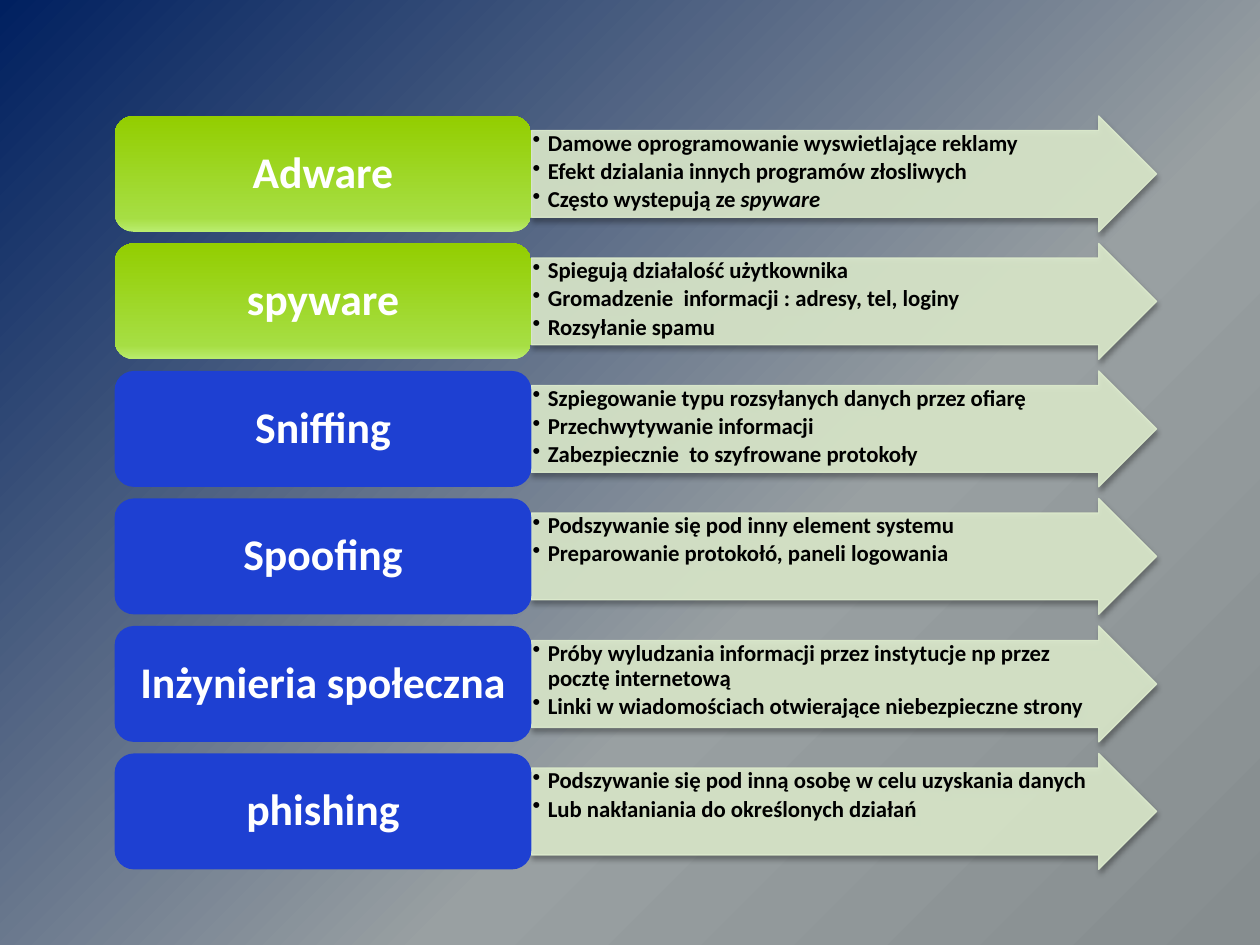
from lxml.etree import SubElement
from pptx import Presentation
from pptx.dml.color import RGBColor
from pptx.enum.shapes import MSO_SHAPE as Shape
from pptx.enum.text import MSO_ANCHOR as Anchor, PP_ALIGN as Align
from pptx.oxml.ns import qn
from pptx.util import Inches, Pt

COLORS = {"arrow": "DDEBCD", "blue": "1E40D2", "label": "FFFFFF", "body": "000000"}
BACKDROP = [(0, "002060"), (62, "99A0A2"), (100, "868D8F")]
GREEN = [(0, "BAED6F"), (12, "A6DE43"), (100, "93CE00")]

# Diagram area in inches, and the rules of its grid
AREA = (0.91, 0.92, 8.27, 5.98)
LABEL_SHARE = 0.4
GAP_SHARE = 0.1  # gap between rows, as a share of the row height

# Label, is it green, bullets (a tuple holds plain text and an italic ending)
THREATS = [
    ("Adware", True, ["Damowe oprogramowanie wyswietlające reklamy",
                      "Efekt dzialania innych programów złosliwych",
                      ("Często wystepują ze ", "spyware")]),
    ("spyware", True, ["Spiegują działalość użytkownika",
                       "Gromadzenie  informacji : adresy, tel, loginy",
                       "Rozsyłanie spamu"]),
    ("Sniffing", False, ["Szpiegowanie typu rozsyłanych danych przez ofiarę",
                         "Przechwytywanie informacji",
                         "Zabezpiecznie  to szyfrowane protokoły"]),
    ("Spoofing", False, ["Podszywanie się pod inny element systemu",
                         "Preparowanie protokołó, paneli logowania"]),
    ("Inżynieria społeczna", False,
     ["Próby wyludzania informacji przez instytucje np przez pocztę internetową",
      "Linki w wiadomościach otwierające niebezpieczne strony"]),
    ("phishing", False, ["Podszywanie się pod inną osobę w celu uzyskania danych",
                         "Lub nakłaniania do określonych działań"]),
]


def color(name):
    return RGBColor.from_string(COLORS[name])


def add_child(parent, tag, **attributes):
    return SubElement(parent, qn(tag), {key: str(value) for key, value in attributes.items()})


def paint_gradient(fill, host, stops, angle):
    """Fill with any number of stops; the angle runs counter-clockwise."""
    fill.gradient()
    fill.gradient_angle = angle
    stop_list = host.find(".//" + qn("a:gsLst"))
    for stop in list(stop_list):
        stop_list.remove(stop)
    for position, value in stops:
        stop = add_child(stop_list, "a:gs", pos=position * 1000)
        add_child(stop, "a:srgbClr", val=value)


def style_font(para, size, name):
    para.line_spacing = 0.9
    para.font.name = "Calibri"
    para.font.size = Pt(size)
    para.font.bold = True
    para.font.color.rgb = color(name)


def add_box(page, preset, box):
    shape = page.shapes.add_shape(preset, *(Inches(length) for length in box))
    shape.shadow.inherit = False
    shape.text_frame.word_wrap = True
    return shape


def add_arrow(page, box, bullets):
    arrow = add_box(page, Shape.RIGHT_ARROW, box)
    arrow.adjustments[0], arrow.adjustments[1] = 0.75, 0.5

    # Translucent fill and outline
    arrow.fill.solid()
    arrow.fill.fore_color.rgb = color("arrow")
    arrow.line.color.rgb = color("arrow")
    arrow.line.width = Pt(0.75)
    properties = arrow._element.spPr
    for shade in properties.iter(qn("a:srgbClr")):
        add_child(shade, "a:alpha", val=90000)

    # Soft shadow straight below
    shadow = add_child(properties.find(qn("a:effectLst")), "a:outerShdw", blurRad=Pt(3.1),
                       dist=Pt(1.8), dir=90 * 60000, rotWithShape=0)
    add_child(add_child(shadow, "a:srgbClr", val="000000"), "a:alpha", val=35000)

    # Bullets, using the whole text area of the arrow
    frame = arrow.text_frame
    frame.vertical_anchor = Anchor.TOP
    frame.margin_left = frame.margin_right = Inches(0.01)
    frame.margin_top = frame.margin_bottom = Inches(0.01)
    for index, bullet in enumerate(bullets):
        para = frame.paragraphs[0] if index == 0 else frame.add_paragraph()
        para.alignment = Align.LEFT
        para.level = 1
        para.space_after = Pt(2)
        settings = para._p.get_or_add_pPr()
        settings.set("marL", str(Inches(0.12)))
        settings.set("indent", str(-Inches(0.12)))
        add_child(settings, "a:buChar", char="•")
        style_font(para, 13, "body")
        plain, *endings = (bullet,) if isinstance(bullet, str) else bullet
        para.add_run().text = plain
        for ending in endings:
            span = para.add_run()
            span.text = ending
            span.font.italic = True


def add_label(page, box, text, green):
    label = add_box(page, Shape.ROUNDED_RECTANGLE, box)
    label.line.fill.background()
    if green:
        paint_gradient(label.fill, label._element.spPr, GREEN, 90)
    else:
        label.fill.solid()
        label.fill.fore_color.rgb = color("blue")
    label.text_frame.vertical_anchor = Anchor.MIDDLE
    para = label.text_frame.paragraphs[0]
    para.text = text
    para.alignment = Align.CENTER
    style_font(para, 25, "label")


def add_threats(page, box, threats):
    left, top, width, height = box
    row = height / (len(threats) + GAP_SHARE * (len(threats) - 1))
    label_width = width * LABEL_SHARE
    for index, (text, green, bullets) in enumerate(threats):
        y = top + index * row * (1 + GAP_SHARE)
        add_arrow(page, (left + label_width, y, width - label_width, row), bullets)
        add_label(page, (left, y, label_width, row), text, green)


def main():
    deck = Presentation()
    deck.slide_width, deck.slide_height = Inches(10), Inches(7.5)
    page = deck.slides.add_slide(deck.slide_layouts[6])
    paint_gradient(page.background.fill, page._element, BACKDROP, 315)
    add_threats(page, AREA, THREATS)
    deck.save("out.pptx")


if __name__ == "__main__":
    main()
